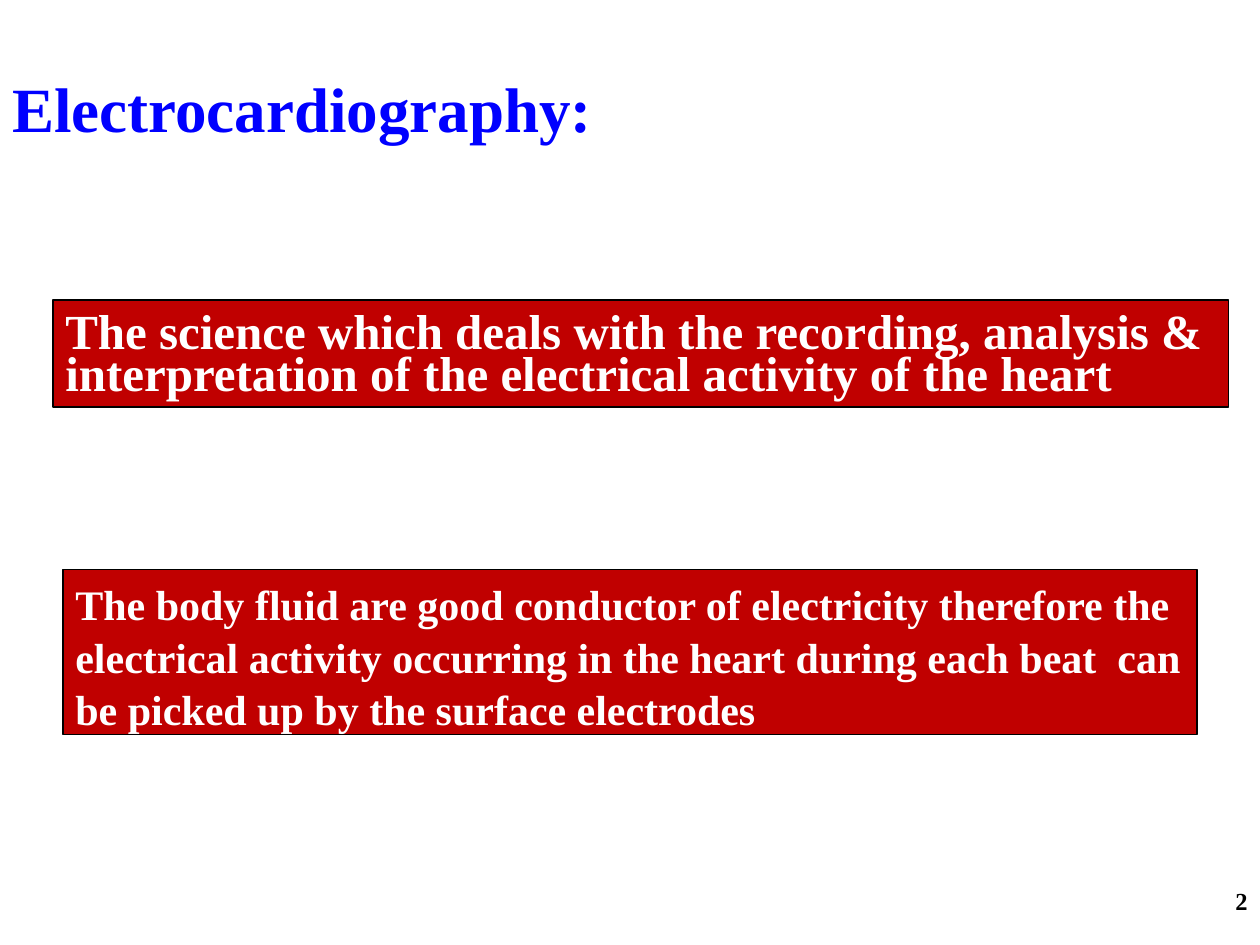
from dataclasses import dataclass

from pptx import Presentation
from pptx.dml.color import RGBColor
from pptx.enum.shapes import MSO_SHAPE as Shape
from pptx.enum.text import MSO_ANCHOR as Anchor, PP_ALIGN as Align
from pptx.util import Inches, Pt


@dataclass(frozen=True)
class Theme:
    font: str = "Times New Roman"
    blue: RGBColor = RGBColor(0, 0, 255)
    red: RGBColor = RGBColor(192, 0, 0)
    white: RGBColor = RGBColor(255, 255, 255)
    black: RGBColor = RGBColor(0, 0, 0)
    title: Pt = Pt(36)
    definition: Pt = Pt(28)
    body: Pt = Pt(24)
    number: Pt = Pt(14)


THEME = Theme()


def write(frame, text, size, color, spacing=1.0, align=Align.LEFT):
    frame.word_wrap = True
    paragraph = frame.paragraphs[0]
    paragraph.text = text
    paragraph.alignment = align
    paragraph.line_spacing = spacing
    font = paragraph.font
    font.name, font.size, font.bold = THEME.font, size, True
    font.color.rgb = color


def add_label(slide, box, text, size, color, **layout):
    label = slide.shapes.add_textbox(*map(Inches, box))
    write(label.text_frame, text, size, color, **layout)


def add_statement(slide, box, text, size, spacing, anchor, top_margin=0.05):
    panel = slide.shapes.add_shape(Shape.RECTANGLE, *map(Inches, box))
    panel.shadow.inherit = False
    panel.fill.solid()
    panel.fill.fore_color.rgb = THEME.red
    panel.line.color.rgb = THEME.black
    panel.line.width = Pt(0.75)
    frame = panel.text_frame
    frame.vertical_anchor = anchor
    frame.margin_top = Inches(top_margin)
    write(frame, text, size, THEME.white, spacing)


def main():
    deck = Presentation()
    deck.slide_width, deck.slide_height = Inches(10), Inches(7.5)
    slide = deck.slides.add_slide(deck.slide_layouts[6])

    add_label(slide, (0, 0.67, 9.42, 0.52), "Electrocardiography:",
              THEME.title, THEME.blue, spacing=0.7)
    add_statement(
        slide, (0.42, 2.38, 9.33, 0.85),
        "The science which deals with the recording, analysis & "
        "interpretation of the electrical activity of the heart",
        THEME.definition, 0.72, Anchor.MIDDLE, top_margin=0.12)
    add_statement(
        slide, (0.5, 4.52, 9, 1.31),
        "The body fluid are good conductor of electricity therefore the "
        "electrical activity occurring in the heart during each beat  can "
        "be picked up by the surface electrodes",
        THEME.body, 1.05, Anchor.TOP)
    add_label(slide, (7.67, 6.98, 2.33, 0.52), "2",
              THEME.number, THEME.black, align=Align.RIGHT)

    deck.save("out.pptx")


if __name__ == "__main__":
    main()
